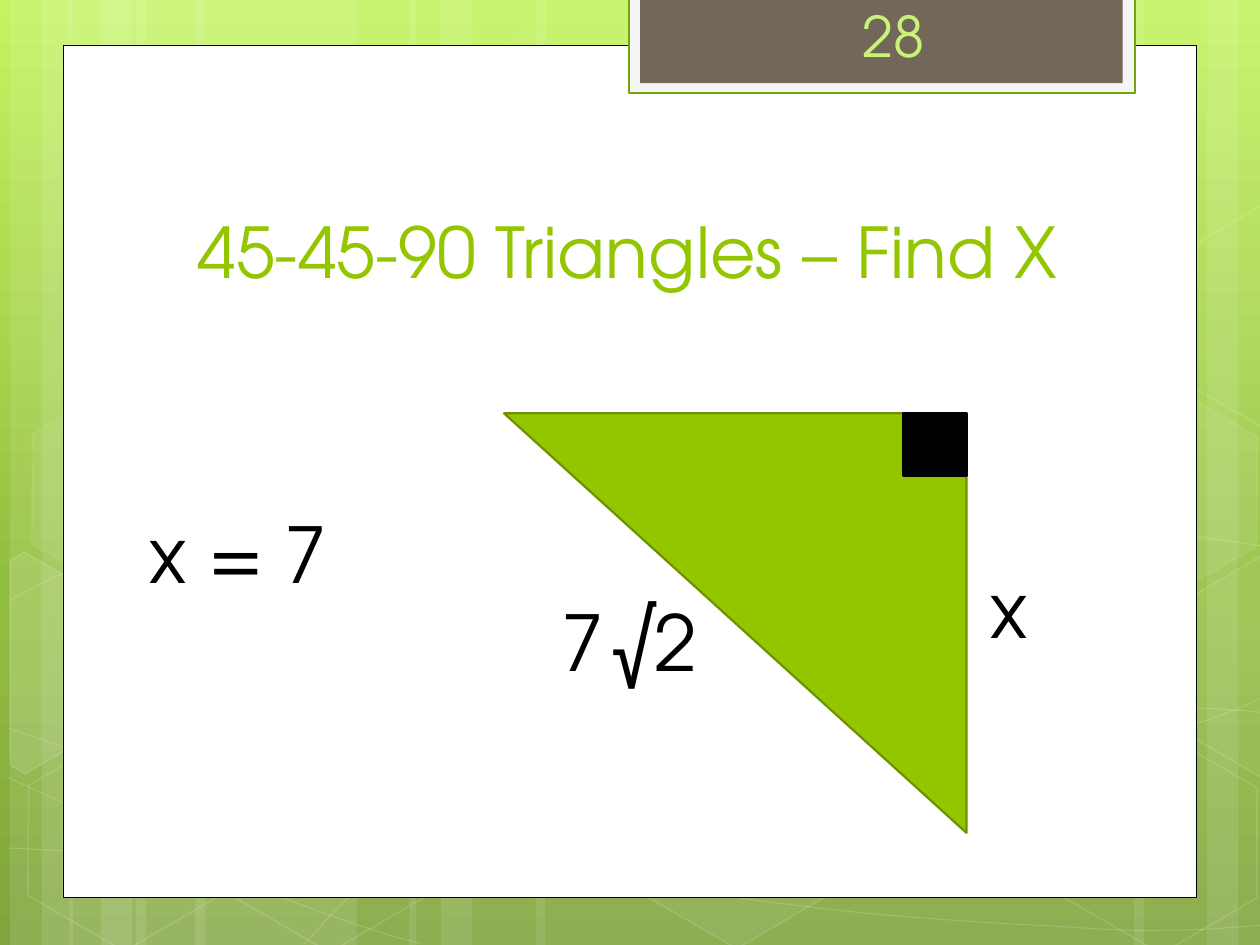
from copy import deepcopy
from math import cos, radians, sin
from typing import NamedTuple, Optional

from lxml.etree import SubElement
from pptx import Presentation
from pptx.dml.color import RGBColor
from pptx.enum.shapes import MSO_SHAPE
from pptx.enum.text import MSO_ANCHOR, MSO_AUTO_SIZE, PP_ALIGN
from pptx.oxml.ns import qn
from pptx.util import Emu, Inches, Pt

# The slide is a grid of 10 columns by 7.5 rows
COLUMNS, ROWS = 10, 7.5
WIDTH, HEIGHT = Inches(10), Inches(7.5)
FONT = "TeX Gyre Adventor"
COLORS = {
    "white": "FFFFFF", "black": "000000", "green": "94C600",
    "dark_green": "6D9200", "tab_edge": "74A510", "tab": "F5F5F5",
    "brown": "71685A", "lime": "CAF278",
}
GRADIENT = [(0, "C3F35F"), (0.62, "93BF3F"), (1, "81A53E")]
TILT = 30


class Paint(NamedTuple):
    fill: Optional[str] = None
    fill_alpha: int = 100
    line: Optional[str] = None
    line_width: float = 1
    line_alpha: int = 100


class Box(NamedTuple):
    left: float
    top: float
    width: float
    height: float


class Label(NamedTuple):
    text: str
    box: Box
    size: int
    color: str = "black"
    indent: float = 0.1
    alignment: PP_ALIGN = PP_ALIGN.LEFT
    anchor: MSO_ANCHOR = MSO_ANCHOR.TOP


class Hexagon(NamedTuple):
    left: float
    top: float
    fill_alpha: int
    line_alpha: int


class CutHexagon(NamedTuple):
    center: tuple
    points: list
    fill_alpha: int


def x_at(column: float) -> Emu:
    return Emu(round(WIDTH * column / COLUMNS))


def y_at(row: float) -> Emu:
    return Emu(round(HEIGHT * row / ROWS))


def place(box: Box) -> tuple:
    return x_at(box.left), y_at(box.top), x_at(box.width), y_at(box.height)


def set_color(fill, color: str, holder, alpha: int) -> None:
    fill.solid()
    fill.fore_color.rgb = RGBColor.from_string(COLORS[color])
    if alpha < 100:
        color_element = holder.find(qn("a:solidFill"))[0]
        SubElement(color_element, qn("a:alpha")).set("val", str(alpha * 1000))


def paint_shape(shape, paint: Paint) -> None:
    shape.shadow.inherit = False
    properties = shape._element.spPr
    if paint.fill:
        set_color(shape.fill, paint.fill, properties, paint.fill_alpha)
    else:
        shape.fill.background()
    if paint.line:
        shape.line.width = Pt(paint.line_width)
        set_color(shape.line.fill, paint.line, properties.find(qn("a:ln")), paint.line_alpha)
    else:
        shape.line.fill.background()


def draw_shape(slide, kind: MSO_SHAPE, box: Box, paint: Paint, rotation: float = 0):
    shape = slide.shapes.add_shape(kind, *place(box))
    shape.rotation = rotation
    paint_shape(shape, paint)
    return shape


def draw_path(slide, points: list, paint: Paint, close: bool):
    corners = [(x_at(x), y_at(y)) for x, y in points]
    builder = slide.shapes.build_freeform(*corners[0])
    builder.add_line_segments(corners[1:], close=close)
    shape = builder.convert_to_shape()
    paint_shape(shape, paint)
    return shape


def draw_curve(slide, points: list, paint: Paint) -> None:
    """Draw a start point and cubic triples as one open Bézier line."""
    shape = draw_path(slide, points, paint, close=False)
    lines = list(shape._element.iter(qn("a:lnTo")))
    for index in range(0, len(lines), 3):
        triple = lines[index:index + 3]
        outline = triple[0].getparent()
        curve = SubElement(outline, qn("a:cubicBezTo"))
        for line in triple:
            curve.append(line[0])
            outline.remove(line)


def upright(points: list, center: tuple) -> list:
    """Turn points back by the tilt, around the center."""
    c, s = cos(radians(TILT)), sin(radians(TILT))
    offsets = [(x - center[0], y - center[1]) for x, y in points]
    return [(center[0] + x * c + y * s, center[1] - x * s + y * c) for x, y in offsets]


def draw_label(slide, label: Label) -> None:
    frame = slide.shapes.add_textbox(*place(label.box)).text_frame
    frame.word_wrap = True
    frame.auto_size = MSO_AUTO_SIZE.NONE
    frame.vertical_anchor = label.anchor
    frame.margin_left = x_at(label.indent)
    frame.text = label.text
    paragraph = frame.paragraphs[0]
    paragraph.alignment = label.alignment
    font = paragraph.runs[0].font
    font.name, font.size = FONT, Pt(label.size)
    font.color.rgb = RGBColor.from_string(COLORS[label.color])


def fill_background(slide) -> None:
    fill = slide.background.fill
    fill.gradient()
    fill.gradient_angle = 270
    stop_list = slide._element.find(".//" + qn("a:gsLst"))
    stop_list.append(deepcopy(stop_list[-1]))
    for stop, (position, color) in zip(fill.gradient_stops, GRADIENT):
        stop.position = position
        stop.color.rgb = RGBColor.from_string(color)


# Backdrop: (left, width) of full-height bars
BARS = [(1.08, 1.75), (0.08, 0.5), (0.33, 0.83), (1.55, 1.75), (0.55, 0.5), (0.8, 0.83),
        (7.33, 1.75), (9.58, 0.5), (9, 0.83), (4.25, 3.08), (3.25, 0.5), (3.5, 0.83)]
CURVES = [
    [(0.07, 6.73), (0.61, 6.76), (1.15, 6.79), (1.9, 6.78), (2.65, 6.77), (3.58, 6.75),
     (4.58, 6.65), (5.58, 6.55), (7, 6.36), (7.92, 6.17), (8.83, 5.98), (9.77, 5.68), (10.07, 5.51)],
    [(0.07, 4.77), (0.36, 4.61), (0.65, 4.46), (1.21, 4.31), (1.78, 4.16), (2.59, 3.94),
     (3.47, 3.87), (4.36, 3.8), (5.44, 3.79), (6.54, 3.87), (7.64, 3.95), (9.47, 4.26), (10.07, 4.34)],
    [(0.06, 6.17), (1.27, 6.72), (2.47, 7.27), (3.34, 7.49)],
    [(0.07, 5.78), (0.38, 5.89), (0.7, 6), (1.28, 6.16), (1.86, 6.31), (2.73, 6.56), (3.57, 6.73),
     (4.4, 6.9), (5.45, 7.08), (6.28, 7.18), (7.11, 7.29), (8, 7.33), (8.53, 7.36),
     (9.05, 7.4), (9.19, 7.38), (9.45, 7.38), (9.71, 7.37), (9.89, 7.35), (10.07, 7.34)],
    [(2.42, 7.49), (2.6, 7.29), (2.78, 7.09), (3.02, 6.91), (3.26, 6.73), (3.6, 6.53), (3.88, 6.39),
     (4.16, 6.25), (4.33, 6.19), (4.7, 6.09), (5.06, 5.99), (5.73, 5.85), (6.08, 5.78),
     (6.44, 5.71), (6.49, 5.71), (6.8, 5.69), (7.11, 5.66), (7.6, 5.63), (7.94, 5.62),
     (8.29, 5.61), (8.86, 5.62), (8.86, 5.62), (9.08, 5.62), (9.31, 5.62), (9.53, 5.62),
     (9.71, 5.63), (9.88, 5.64), (9.97, 5.65), (10.06, 5.66), (10.03, 5.65), (10.06, 5.66)],
]
HEXAGONS = [
    Hexagon(3.34, 0.36, 4, 8), Hexagon(4.97, 5.89, 6, 12), Hexagon(0.11, 5.91, 0, 12),
    Hexagon(0.14, 3.12, 7, 8), Hexagon(1.74, 5.92, 0, 12), Hexagon(7.53, 4.53, 10, 12),
    Hexagon(8.34, 5.93, 0, 12), Hexagon(8.34, 3.14, 7, 8),
]
CUT_HEXAGONS = [
    CutHexagon((0.36, 5.35), [(0.08, 4.45), (0.19, 4.38), (0.96, 4.82), (0.95, 5.7),
                              (0.2, 6.14), (0.08, 6.07)], 10),
    CutHexagon((9.85, 5.2), [(9.26, 4.85), (10.01, 4.41), (10.09, 4.46), (10.09, 6.13),
                             (10.02, 6.17), (9.26, 5.73)], 4),
    CutHexagon((9.85, 2.41), [(9.26, 2.07), (10.01, 1.63), (10.1, 1.68), (10.09, 3.35),
                              (10.02, 3.39), (9.26, 2.95)], 0),
]
# White page and the tab that holds the slide number
PANELS = [
    (Box(0.5, 0.36, 9, 6.76), Paint("white", line="black", line_width=0.5)),
    (Box(4.99, -0.02, 4.02, 0.76), Paint("tab", line="tab_edge", line_width=1.25)),
    (Box(5.08, -0.02, 3.83, 0.68), Paint("brown")),
]
LABELS = [
    Label("45-45-90 Triangles – Find X", Box(1.14, 1.12, 7.68, 1.25), 40, "green",
          alignment=PP_ALIGN.CENTER, anchor=MSO_ANCHOR.BOTTOM),
    Label("x", Box(7.25, 4.41, 1.58, 0.84), 44, indent=0.61),
    Label("7√2", Box(4.02, 4.67, 1.92, 0.84), 44, indent=0.44),
    Label("x = 7", Box(0.75, 3.97, 2.92, 0.84), 44, indent=0.44),
    Label("28", Box(6.75, -0.04, 1.21, 0.64), 32, "lime"),
]


def main() -> None:
    presentation = Presentation()
    presentation.slide_width, presentation.slide_height = WIDTH, HEIGHT
    slide = presentation.slides.add_slide(presentation.slide_layouts[6])
    fill_background(slide)
    for left, width in BARS:
        draw_shape(slide, MSO_SHAPE.RECTANGLE, Box(left, 0, width, ROWS), Paint("white", 10))
    for curve in CURVES:
        draw_curve(slide, curve, Paint(None, 100, "white", 0.5, 20))
    for left, top, fill_alpha, line_alpha in HEXAGONS:
        paint = Paint("white" if fill_alpha else None, fill_alpha, "white", 1, line_alpha)
        hexagon = draw_shape(slide, MSO_SHAPE.HEXAGON, Box(left, top, 1.75, 1.52), paint, TILT)
        hexagon.adjustments[0], hexagon.adjustments[1] = 0.285, 1.155
    for center, points, fill_alpha in CUT_HEXAGONS:
        paint = Paint("white" if fill_alpha else None, fill_alpha, "white", 1, 12)
        draw_path(slide, upright(points, center), paint, close=True).rotation = TILT
    for box, paint in PANELS:
        draw_shape(slide, MSO_SHAPE.RECTANGLE, box, paint)
    # Right triangle with its right-angle mark
    draw_shape(slide, MSO_SHAPE.RIGHT_TRIANGLE, Box(4, 3.28, 3.67, 3.33),
               Paint("green", line="dark_green", line_width=1.25), 180)
    draw_shape(slide, MSO_SHAPE.RECTANGLE, Box(7.17, 3.28, 0.5, 0.5),
               Paint("black", line="black", line_width=1.25), 180)
    for label in LABELS:
        draw_label(slide, label)
    presentation.save("out.pptx")


if __name__ == "__main__":
    main()
